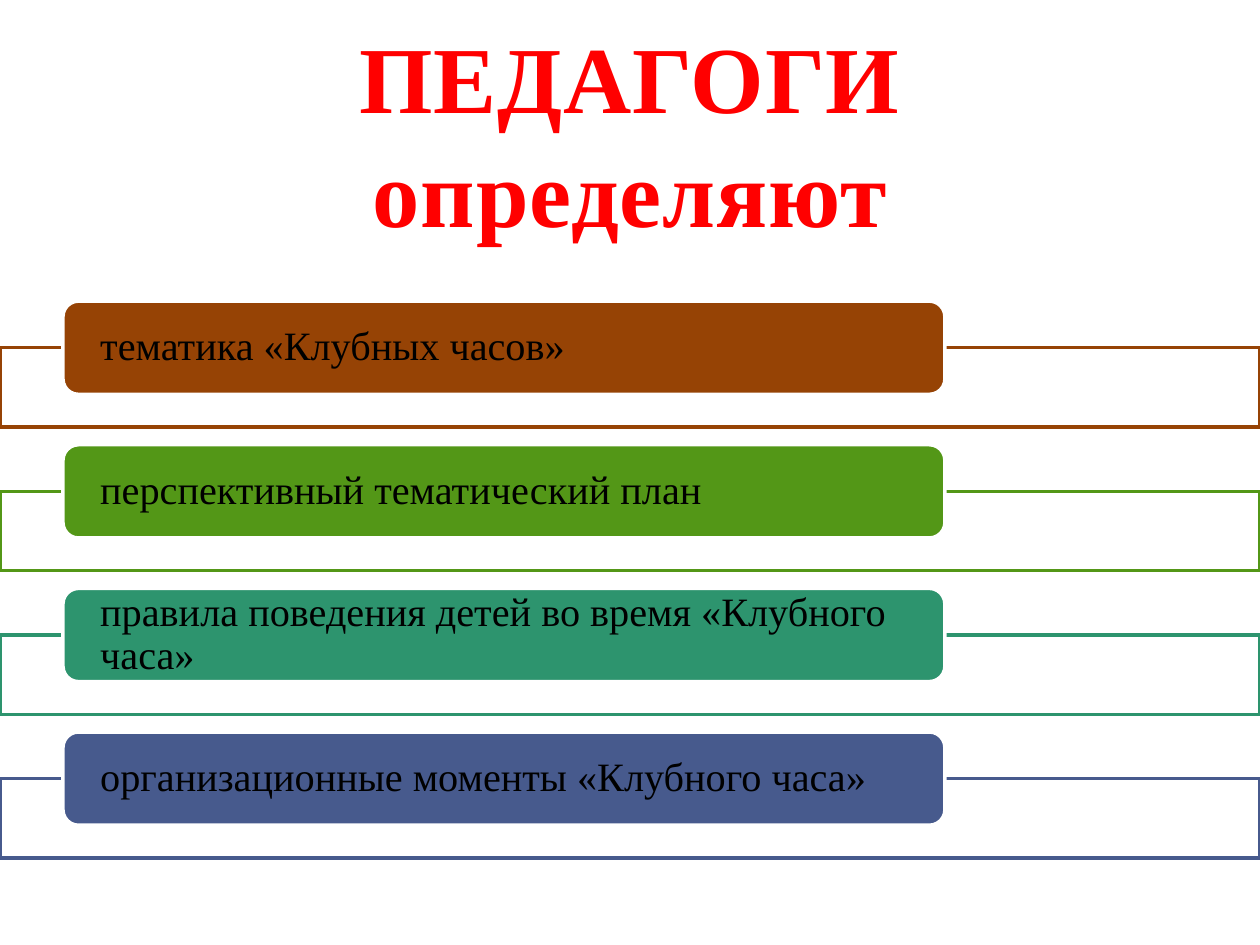
from pptx import Presentation
from pptx.dml.color import RGBColor
from pptx.enum.shapes import MSO_SHAPE
from pptx.enum.text import MSO_ANCHOR, PP_ALIGN
from pptx.util import Inches, Pt

RECT, ROUND = MSO_SHAPE.RECTANGLE, MSO_SHAPE.ROUNDED_RECTANGLE
MIDDLE, LEFT, CENTER = MSO_ANCHOR.MIDDLE, PP_ALIGN.LEFT, PP_ALIGN.CENTER
WHITE = RGBColor(0xFF, 0xFF, 0xFF)
BLACK = RGBColor(0, 0, 0)
RED = RGBColor(0xFF, 0, 0)
BROWN = RGBColor(0x96, 0x43, 0x05)
GREEN = RGBColor(0x53, 0x97, 0x17)
TEAL = RGBColor(0x2D, 0x94, 0x6E)
BLUE = RGBColor(0x47, 0x5A, 0x8D)
FONT = "Times New Roman"

# Content
TITLE = "ПЕДАГОГИ\vопределяют"
ITEMS = [
    ("тематика «Клубных часов»", BROWN),
    ("перспективный тематический план", GREEN),
    ("правила поведения детей во время «Клубного часа»", TEAL),
    ("организационные моменты «Клубного часа»", BLUE),
]

# Layout, in inches
FIRST_TOP, PITCH = 2.39, 1.14
LABEL_H, FRAME_H = 0.74, 0.63


def set_attrs(obj, values):
    for name, value in values.items():
        setattr(obj, name, value)


def add_box(slide, kind, box, fill, line):
    sp = slide.shapes.add_shape(kind, *map(Inches, box))
    sp.shadow.inherit = False
    sp.fill.solid()
    sp.fill.fore_color.rgb = fill
    sp.line.color.rgb = line
    sp.line.width = Pt(2)
    return sp


def format_text(sp, color, frame, paragraph, font):
    tf = sp.text_frame
    set_attrs(tf, dict(word_wrap=True, vertical_anchor=MIDDLE, **frame))
    p = tf.paragraphs[0]
    set_attrs(p, paragraph)
    for r in p.runs:
        set_attrs(r.font, dict(name=FONT, **font))
        r.font.color.rgb = color
    return p


prs = Presentation()
prs.slide_width, prs.slide_height = Inches(10), Inches(7.5)
s = prs.slides.add_slide(prs.slide_layouts[5])

# Title
title = s.shapes.title
set_attrs(title, dict(left=Inches(0.5), top=Inches(0.3),
                      width=Inches(9), height=Inches(1.25)))
title.text_frame.text = TITLE
p = format_text(title, RED,
                dict(margin_top=Inches(0.25), margin_bottom=0),
                dict(alignment=CENTER, line_spacing=Pt(65)),
                dict(size=Pt(54), bold=True))
for r in p.runs:
    r.font._element.set("spc", "50")

# List: an open frame with a label over its top edge
for i, (text, color) in enumerate(ITEMS):
    top = FIRST_TOP + i * PITCH
    add_box(s, RECT, (0, top + LABEL_H / 2, 10, FRAME_H), WHITE, color)
    label = add_box(s, ROUND, (0.5, top, 7, LABEL_H), color, WHITE)
    label.text_frame.text = text
    format_text(label, BLACK,
                dict(margin_left=Inches(0.26), margin_right=Inches(0.26),
                     margin_top=0, margin_bottom=0),
                dict(alignment=LEFT, line_spacing=0.9),
                dict(size=Pt(23)))

prs.save("out.pptx")
